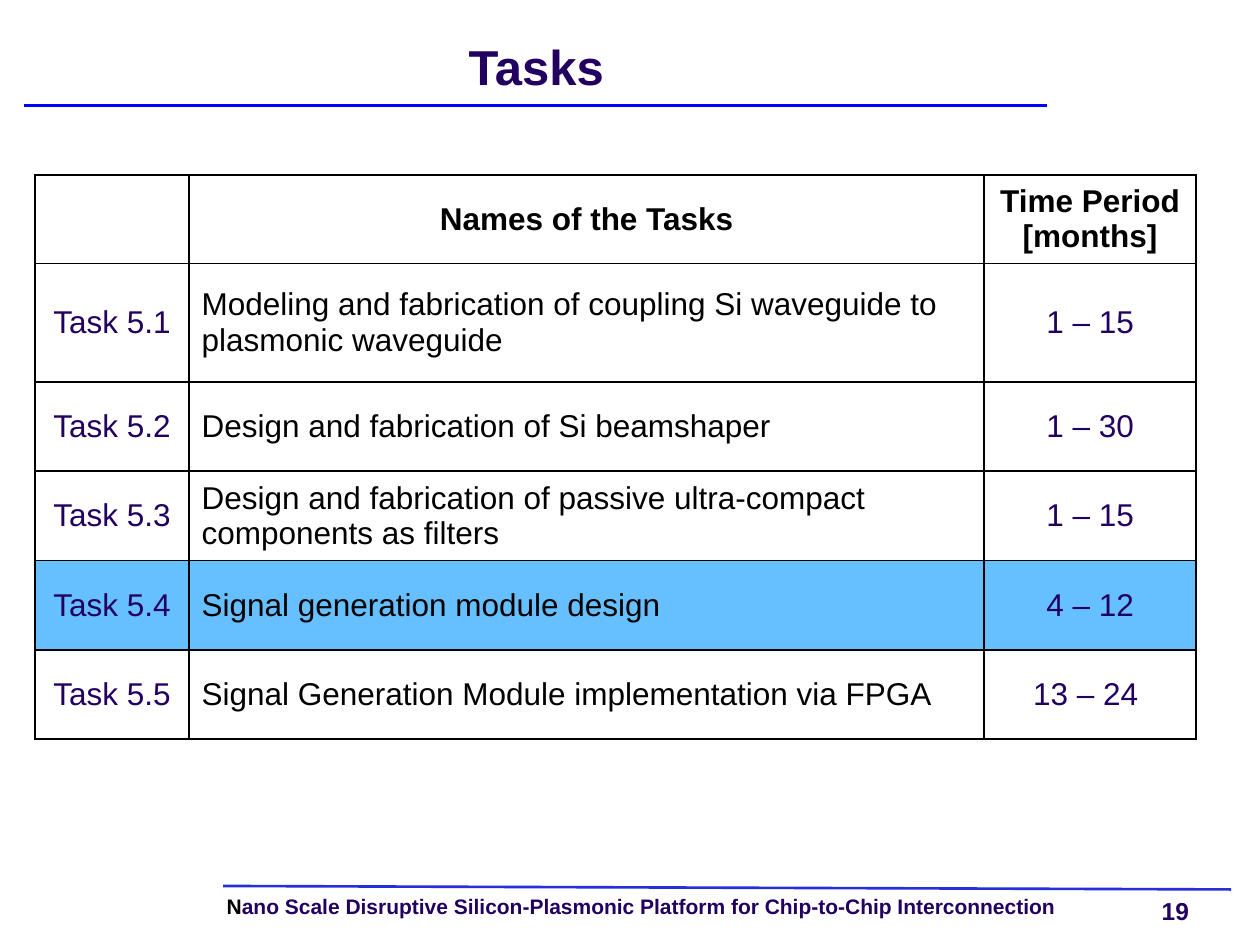
from lxml.etree import SubElement
from pptx import Presentation
from pptx.dml.color import RGBColor
from pptx.enum.shapes import MSO_CONNECTOR
from pptx.enum.text import MSO_ANCHOR, PP_ALIGN
from pptx.oxml.ns import qn
from pptx.util import Cm, Pt

BLACK = RGBColor(0x00, 0x00, 0x00)
INDIGO = RGBColor(0x22, 0x00, 0x60)
TITLE_BLUE = RGBColor(0x00, 0x00, 0xFF)
FOOTER_BLUE = RGBColor(0x26, 0x2F, 0xDA)
HIGHLIGHT = RGBColor(0x66, 0xC0, 0xFF)

HEADER = ("", "Names of the Tasks", "Time Period [months]")
TASKS = [
    ("Task 5.1", "Modeling and fabrication of coupling Si waveguide to plasmonic waveguide", "1 – 15"),
    ("Task 5.2", "Design and fabrication of Si beamshaper", "1 – 30"),
    ("Task 5.3", "Design and fabrication of passive ultra-compact components as filters", "1 – 15"),
    ("Task 5.4", "Signal generation module design", "4 – 12"),
    ("Task 5.5", "Signal Generation Module implementation via FPGA", "13 – 24 "),
]
HIGHLIGHTED_TASK = "Task 5.4"
COLUMN_WIDTHS = (3.1, 16.03, 4.27)
ROW_HEIGHTS = (1.68, 2.39, 1.8, 1.8, 1.8, 1.8)

TEXTS = [
    {"box": (0.51, 0.51, 20.6, 1.7), "runs": [("Tasks", INDIGO)], "size": 28, "wrap": True,
     "anchor": MSO_ANCHOR.MIDDLE,
     "paragraph": {"alignment": PP_ALIGN.CENTER, "line_spacing": Pt(32)}},
    {"box": (4.57, 18.06, 18.14, 0.46), "size": 12, "wrap": True, "anchor": MSO_ANCHOR.TOP,
     "runs": [("N", BLACK),
              ("ano Scale Disruptive Silicon-Plasmonic Platform for Chip-to-Chip Interconnection", INDIGO)],
     "paragraph": {"line_spacing": 0.9}},
    {"box": (23.42, 18.06, 1.02, 0.58), "runs": [("19", INDIGO)], "size": 14, "wrap": False,
     "anchor": MSO_ANCHOR.TOP, "paragraph": {}},
]
RULES = [
    ((4.5, 17.86, 24.82, 17.93), FOOTER_BLUE),
    ((0.48, 2.13, 21.11, 2.13), TITLE_BLUE),
]


def apply(target, values):
    for name, value in values.items():
        setattr(target, name, value)


def add_run(paragraph, text, size, color, bold):
    run = paragraph.add_run()
    run.text = text
    apply(run.font, {"name": "Arial", "size": Pt(size), "bold": bold})
    run.font.color.rgb = color


def add_text(slide, item):
    frame = slide.shapes.add_textbox(*map(Cm, item["box"])).text_frame
    apply(frame, {"word_wrap": item["wrap"], "vertical_anchor": item["anchor"],
                  "margin_left": 0, "margin_top": 0, "margin_right": 0, "margin_bottom": 0})
    paragraph = frame.paragraphs[0]
    apply(paragraph, item["paragraph"])
    for text, color in item["runs"]:
        add_run(paragraph, text, item["size"], color, True)


def add_rule(slide, ends, color):
    connector = slide.shapes.add_connector(MSO_CONNECTOR.STRAIGHT, *map(Cm, ends))
    connector.line.color.rgb = color
    connector.line.width = Pt(1.5)
    SubElement(connector._element.spPr, qn("a:effectLst"))


def add_borders(cell):
    properties = cell._tc.get_or_add_tcPr()
    for side in ("lnL", "lnR", "lnT", "lnB"):
        border = SubElement(properties, qn(f"a:{side}"), w=str(Pt(1)))
        fill = SubElement(border, qn("a:solidFill"))
        SubElement(fill, qn("a:srgbClr"), val=str(BLACK))


def add_task_table(slide):
    rows = [HEADER, *TASKS]
    table = slide.shapes.add_table(
        len(rows), len(HEADER), Cm(0.71), Cm(3.53),
        Cm(sum(COLUMN_WIDTHS)), Cm(sum(ROW_HEIGHTS))).table
    apply(table, {"first_row": False, "horz_banding": False})
    for column, width in zip(table.columns, COLUMN_WIDTHS):
        column.width = Cm(width)
    for row, height in zip(table.rows, ROW_HEIGHTS):
        row.height = Cm(height)
    for row_index, values in enumerate(rows):
        is_header = row_index == 0
        for column_index, text in enumerate(values):
            is_name = column_index == 1
            cell = table.cell(row_index, column_index)
            cell.vertical_anchor = MSO_ANCHOR.MIDDLE
            add_borders(cell)
            if values[0] == HIGHLIGHTED_TASK:
                cell.fill.solid()
                cell.fill.fore_color.rgb = HIGHLIGHT
            else:
                cell.fill.background()
            paragraph = cell.text_frame.paragraphs[0]
            paragraph.alignment = PP_ALIGN.LEFT if is_name and not is_header else PP_ALIGN.CENTER
            if text:
                add_run(paragraph, text, 18, BLACK if is_header or is_name else INDIGO, is_header)


def main():
    presentation = Presentation()
    apply(presentation, {"slide_width": Cm(25.4), "slide_height": Cm(19.05)})
    slide = presentation.slides.add_slide(presentation.slide_layouts[6])
    for ends, color in RULES:
        add_rule(slide, ends, color)
    for item in TEXTS:
        add_text(slide, item)
    add_task_table(slide)
    presentation.save("out.pptx")


if __name__ == "__main__":
    main()
